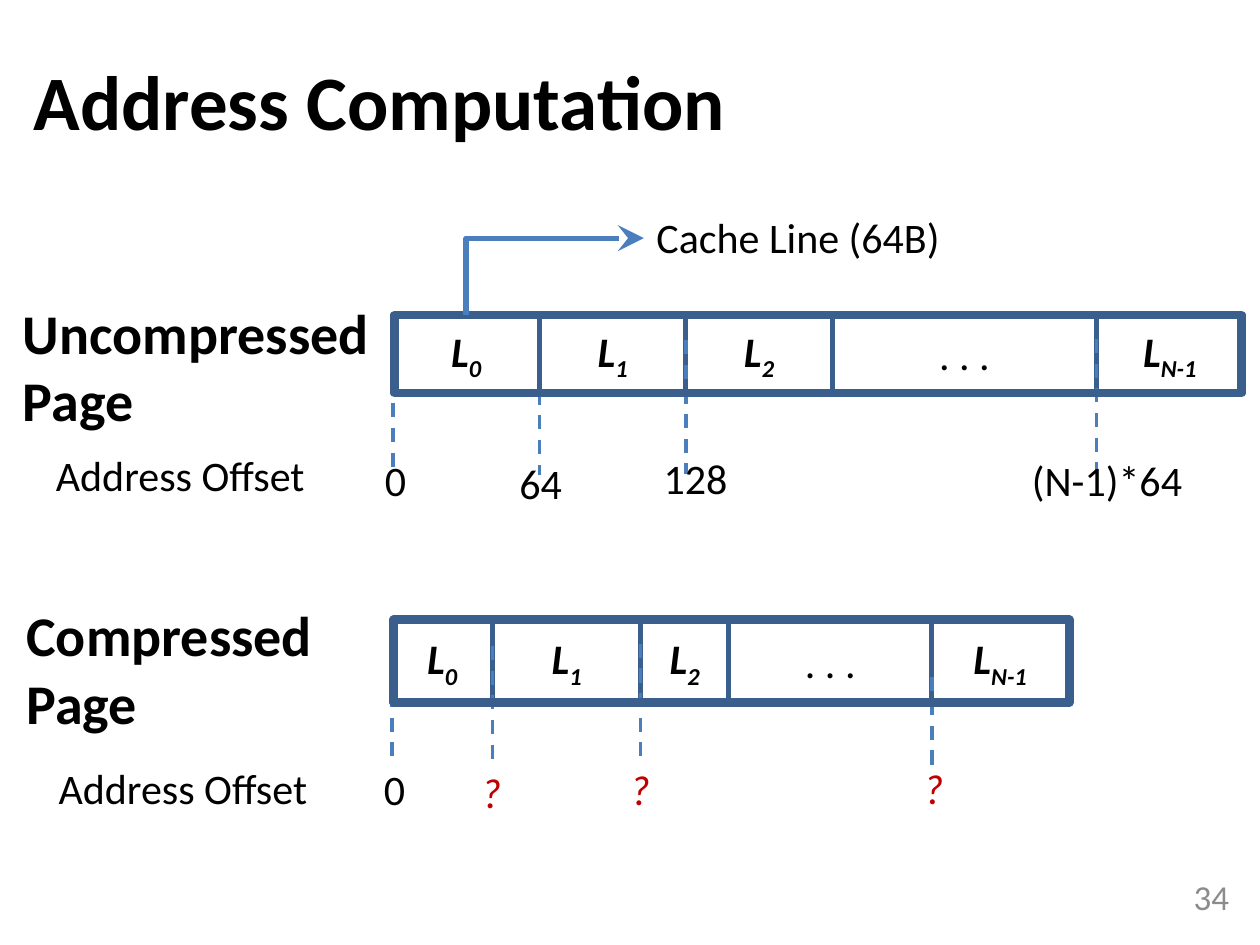
from itertools import accumulate
from typing import NamedTuple

from lxml.etree import SubElement
from pptx import Presentation
from pptx.dml.color import RGBColor
from pptx.enum.dml import MSO_LINE
from pptx.enum.shapes import MSO_CONNECTOR as Link, MSO_SHAPE as Shape
from pptx.enum.text import MSO_ANCHOR as Anchor, MSO_AUTO_SIZE as AutoSize, PP_ALIGN as Align
from pptx.oxml.ns import qn
from pptx.util import Pt

BORDER, ACCENT, BLACK, RED, GREY = "3A5F8C", "4B7EBC", "000000", "C00000", "8C8C8C"


class Mark(NamedTuple):
    """An address mark; lengths are relative to the cell edge and the row top."""
    cell: int
    label: str
    shift: float
    label_top: float
    dash_top: float
    dash_bottom: float
    behind: bool = False


def paint(target, color):
    """Give a font colour or a line the hex colour."""
    target.color.rgb = RGBColor.from_string(color)


def write(frame, text, size=24, color=BLACK, bold=False, italic=False,
          align=Align.LEFT, anchor=Anchor.TOP, subscript=""):
    """Put formatted text, with an optional subscript, in a text frame."""
    frame.word_wrap = True
    frame.vertical_anchor = anchor
    paragraph = frame.paragraphs[0]
    paragraph.alignment = align
    for part in filter(None, (text, subscript)):
        run = paragraph.add_run()
        run.text = part
        font = run.font
        font.name, font.size, font.bold, font.italic = "Calibri", Pt(size), bold, italic
        paint(font, color)
    if subscript:
        font._element.set("baseline", "-25000")


def add_label(slide, box, text, **style):
    """Add a text box at left, top, width, height."""
    frame = slide.shapes.add_textbox(*map(Pt, box)).text_frame
    write(frame, text, **style)
    frame.auto_size = AutoSize.SHAPE_TO_FIT_TEXT


def add_frame(slide, box, weight):
    """Add an unfilled, outlined rectangle."""
    frame = slide.shapes.add_shape(Shape.RECTANGLE, *map(Pt, box))
    frame.shadow.inherit = False
    frame.fill.background()
    paint(frame.line, BORDER)
    frame.line.width = Pt(weight)
    return frame


def add_line(slide, kind, ends, weight):
    """Add a connector without a shadow."""
    line = slide.shapes.add_connector(kind, *map(Pt, ends))
    paint(line.line, ACCENT)
    line.line.width = Pt(weight)
    SubElement(line._element.spPr, qn("a:effectLst"))
    return line


def add_dashes(slide, marks, edges, top):
    """Drop a dashed line from the cell edge of each mark."""
    for mark in marks:
        x = edges[mark.cell]
        ends = (x, top + mark.dash_top, x, top + mark.dash_bottom)
        add_line(slide, Link.STRAIGHT, ends, 2).line.dash_style = MSO_LINE.DASH


def add_page(slide, box, name, name_box, offset_box, widths, marks):
    """Draw one memory page with its names, cells and address marks; return its cells."""
    left, top, width, height = box
    edges = list(accumulate(widths, initial=left))
    add_dashes(slide, [mark for mark in marks if mark.behind], edges, top)
    cells = []
    for x, cell_width, index in zip(edges, widths, ("0", "1", "2", "", "N-1")):
        cell = add_frame(slide, (x, top, cell_width, height), 3)
        named = bool(index)
        write(cell.text_frame, "L" if named else ". . .", bold=named, italic=named,
              align=Align.CENTER, anchor=Anchor.MIDDLE, subscript=index)
        cells.append(cell)
    add_dashes(slide, [mark for mark in marks if not mark.behind], edges, top)
    for mark in marks:
        unknown = mark.label == "?"
        label_width = 24 + 18 * len(mark.label)
        x = edges[mark.cell] + mark.shift - label_width / 2
        add_label(slide, (x, top + mark.label_top, label_width, 36), mark.label,
                  color=RED if unknown else BLACK, italic=unknown, align=Align.CENTER)
    x, y, name_width = name_box
    add_label(slide, (left + x, top + y, name_width, 85), name, size=32, bold=True)
    x, y, offset_width = offset_box
    add_label(slide, (left + x, top + y, offset_width, 36), "Address Offset",
              align=Align.CENTER)
    add_frame(slide, (left + 1, top, width, height), 5)
    return cells


def add_callout(slide, box, cell, text):
    """Name a cell with an elbow arrow rising from its top to the text."""
    left, top, width, height = box
    middle = cell.left + cell.width // 2
    arrow = add_line(slide, Link.ELBOW,
                     (left, top + 18.7, middle.pt if hasattr(middle, "pt") else middle / 12700,
                      cell.top.pt), 3)
    arrow.end_connect(cell, 0)
    arrow._element.spPr.find(qn("a:prstGeom")).set("prst", "bentConnector2")
    SubElement(arrow.line._get_or_add_ln(), qn("a:headEnd"), type="stealth", w="lg", len="lg")
    add_label(slide, box, text)


def add_title(slide, box, text):
    """Move and fill the title placeholder."""
    title = slide.shapes.title
    title.left, title.top, title.width, title.height = map(Pt, box)
    write(title.text_frame, text, size=44, bold=True, anchor=Anchor.MIDDLE)


def main():
    """Build and save the slide."""
    deck = Presentation()
    deck.slide_width, deck.slide_height = Pt(720), Pt(540)
    slide = deck.slides.add_slide(deck.slide_layouts[5])
    add_title(slide, (12, 12, 648, 90), "Address Computation")
    uncompressed = add_page(
        slide, (224.5, 180, 484, 44.6), "Uncompressed Page",
        (-218.5, -13, 246), (-218.5, 73.4, 194),
        (83.7, 83.7, 83.7, 151, 83.7),
        (Mark(0, "0", 1.5, 76.3, 22.3, 87),
         Mark(1, "64", 0.7, 77.8, 15, 91.4, behind=True),
         Mark(2, "128", 5.5, 74.9, 14.4, 90.7),
         Mark(4, "(N-1)*64", 6, 76.3, 13.7, 90)))
    add_page(
        slide, (224, 354.2, 386, 47.3), "Compressed Page",
        (-216, -14.4, 216), (-216, 77.8, 193),
        (57.5, 84.5, 50.5, 116, 78),
        (Mark(0, "0", 1.5, 78.5, 13.7, 78.5),
         Mark(1, "?", -0.7, 80, 15, 80),
         Mark(2, "?", -0.2, 78.5, 13.7, 78.5),
         Mark(4, "?", 1, 77.8, 32.4, 86.4)))
    add_callout(slide, (368, 117.4, 181, 36), uncompressed[0], "Cache Line (64B)")
    number = slide.shapes.add_textbox(Pt(541.5), Pt(498), Pt(168), Pt(29)).text_frame
    write(number, "34", size=20, color=GREY, align=Align.RIGHT, anchor=Anchor.MIDDLE)
    deck.save("out.pptx")


if __name__ == "__main__":
    main()
